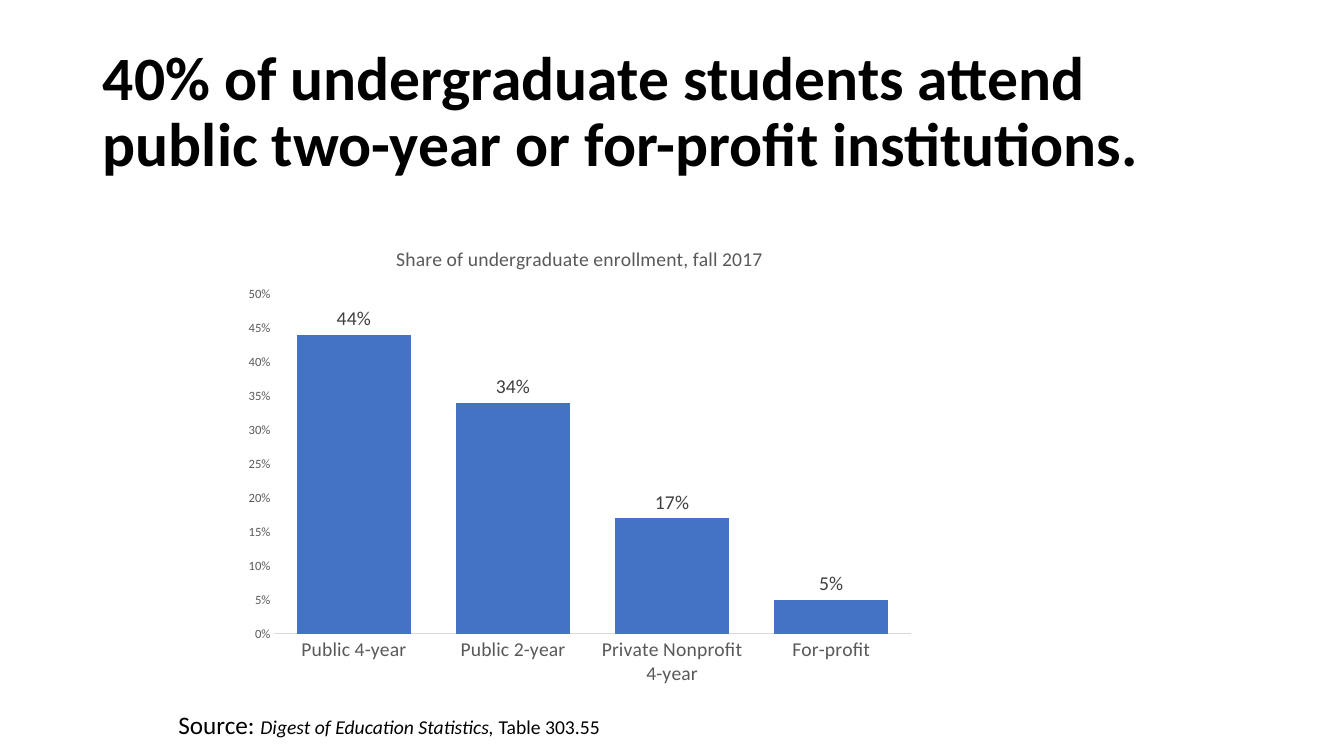
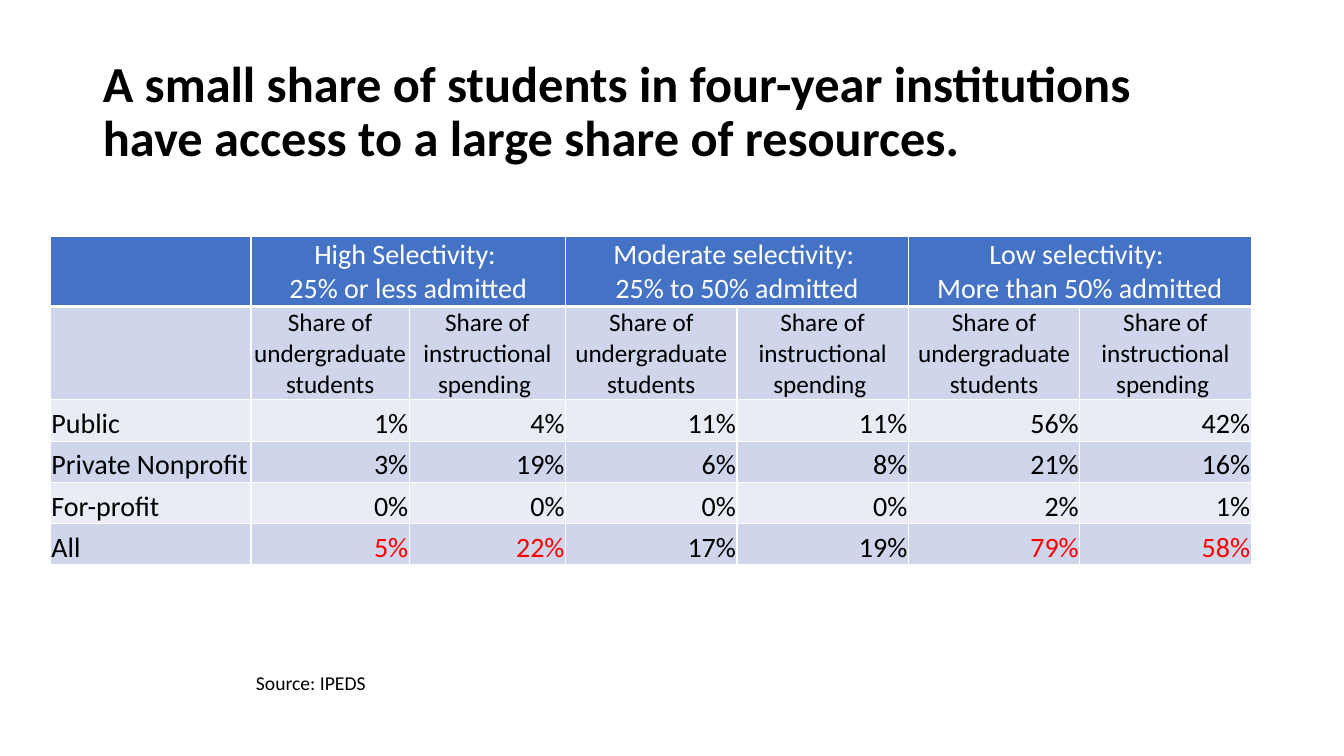
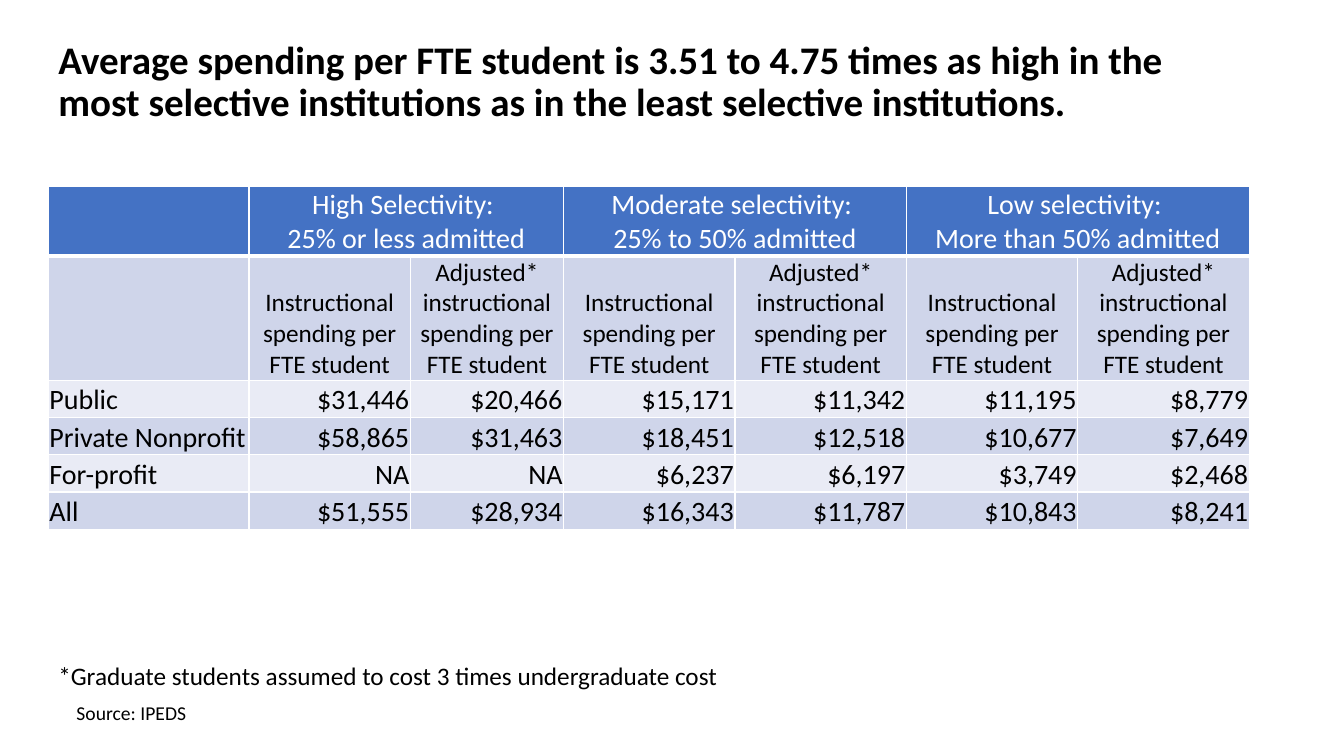
import dataclasses
import typing

import lxml.etree
import pptx
import pptx.chart.data
import pptx.dml.color
import pptx.enum.chart
import pptx.enum.text
import pptx.oxml.ns
import pptx.util

Inches = pptx.util.Inches
Pt = pptx.util.Pt
Align = pptx.enum.text.PP_ALIGN
Anchor = pptx.enum.text.MSO_ANCHOR

FONT = "Calibri"
BLACK, WHITE, RED, BLUE = "000000", "FFFFFF", "FF0000", "4472C4"
DARK_BAND, LIGHT_BAND = "CFD5EA", "E9EBF5"
AXIS_TEXT, LABEL_TEXT, AXIS_LINE = "595959", "404040", "D9D9D9"

SELECTIVITY_GROUPS = (
    "High Selectivity: \n25% or less admitted",
    "Moderate selectivity: \n25% to 50% admitted",
    "Low selectivity: \nMore than 50% admitted",
)
SECTORS = ("Public", "Private Nonprofit", "For-profit", "All")


@dataclasses.dataclass(frozen=True)
class Box:
    left: float
    top: float
    width: float
    height: float

    def lengths(self) -> tuple[int, ...]:
        return tuple(Inches(side) for side in dataclasses.astuple(self))


@dataclasses.dataclass(frozen=True)
class Heading:
    text: str
    size: float
    box: Box = Box(0.92, 0.4, 11.5, 1.45)
    anchor: Anchor = Anchor.MIDDLE
    margin_top: float = 0.05


@dataclasses.dataclass(frozen=True)
class Phrase:
    text: str
    size: float = 14
    italic: bool = False


@dataclasses.dataclass(frozen=True)
class Note:
    box: Box
    phrases: tuple[Phrase, ...]
    wrap: bool = False
    anchor: Anchor = Anchor.TOP


@dataclasses.dataclass(frozen=True)
class SelectivityTable:
    box: Box
    column_widths: tuple[float, ...]
    row_heights: tuple[float, ...]
    measures: tuple[str, str]
    values: tuple[str, ...]
    red_columns: tuple[int, ...] = ()


def color(value: str) -> pptx.dml.color.RGBColor:
    return pptx.dml.color.RGBColor.from_string(value)


def set_font(font: typing.Any, size: float, ink: str = BLACK, bold: bool = False) -> None:
    font.name = FONT
    font.size = Pt(size)
    font.bold = bold
    font.color.rgb = color(ink)


def add_titled_slide(deck: typing.Any, heading: Heading) -> typing.Any:
    slide = deck.slides.add_slide(deck.slide_layouts[5])
    title = slide.shapes.title
    title.left, title.top, title.width, title.height = heading.box.lengths()
    frame = title.text_frame
    frame.text = heading.text
    frame.word_wrap = True
    frame.auto_size = pptx.enum.text.MSO_AUTO_SIZE.NONE
    frame.vertical_anchor = heading.anchor
    frame.margin_top = Inches(heading.margin_top)
    paragraph = frame.paragraphs[0]
    paragraph.alignment = Align.LEFT
    paragraph.line_spacing = 0.9
    set_font(paragraph.font, heading.size, bold=True)
    return slide


def add_note(slide: typing.Any, note: Note) -> None:
    frame = slide.shapes.add_textbox(*note.box.lengths()).text_frame
    frame.word_wrap = note.wrap
    frame.vertical_anchor = note.anchor
    if not note.wrap:
        frame.auto_size = pptx.enum.text.MSO_AUTO_SIZE.SHAPE_TO_FIT_TEXT
    paragraph = frame.paragraphs[0]
    set_font(paragraph.font, note.phrases[0].size)
    for phrase in note.phrases:
        run = paragraph.add_run()
        run.text = phrase.text
        run.font.size = Pt(phrase.size)
        run.font.italic = phrase.italic


def add_enrollment_chart(slide: typing.Any, box: Box) -> None:
    enrollment = pptx.chart.data.CategoryChartData(number_format="0%")
    enrollment.categories = ("Public 4-year", "Public 2-year", "Private Nonprofit 4-year", "For-profit")
    caption = "Share of undergraduate enrollment, fall 2017"
    enrollment.add_series(caption, (0.44, 0.34, 0.17, 0.05))
    chart = slide.shapes.add_chart(
        pptx.enum.chart.XL_CHART_TYPE.COLUMN_CLUSTERED, *box.lengths(), enrollment
    ).chart
    set_font(chart.font, 10)
    chart.has_legend = False
    chart.has_title = True
    chart.chart_title.include_in_layout = False
    chart.chart_title.text_frame.text = caption
    set_font(chart.chart_title.text_frame.paragraphs[0].font, 14, AXIS_TEXT)

    sector_axis, share_axis = chart.category_axis, chart.value_axis
    for axis, size in ((sector_axis, 14), (share_axis, 9)):
        axis.major_tick_mark = pptx.enum.chart.XL_TICK_MARK.NONE
        axis.minor_tick_mark = pptx.enum.chart.XL_TICK_MARK.NONE
        axis.has_major_gridlines = False
        set_font(axis.tick_labels.font, size, AXIS_TEXT)
    sector_axis.format.line.color.rgb = color(AXIS_LINE)
    sector_axis.format.line.width = Pt(0.75)
    share_axis.format.line.fill.background()
    share_axis.minimum_scale, share_axis.maximum_scale, share_axis.major_unit = 0, 0.5, 0.05
    share_axis.tick_labels.number_format = "0%"
    share_axis.tick_labels.number_format_is_linked = False

    columns = chart.plots[0]
    columns.gap_width = 40
    columns.overlap = -27
    columns.vary_by_categories = False
    shares = columns.series[0]
    shares.invert_if_negative = False
    shares.format.fill.solid()
    shares.format.fill.fore_color.rgb = color(BLUE)
    labels = shares.data_labels
    labels.show_value = True
    labels.position = pptx.enum.chart.XL_LABEL_POSITION.OUTSIDE_END
    labels.number_format = "0%"
    labels.number_format_is_linked = False
    set_font(labels.font, 14, LABEL_TEXT)


def set_borders(cell: typing.Any, top: float, bottom: float) -> None:
    properties = cell._tc.get_or_add_tcPr()
    qn = pptx.oxml.ns.qn
    for side, width in (("L", 1), ("R", 1), ("T", top), ("B", bottom)):
        line = lxml.etree.SubElement(properties, qn(f"a:ln{side}"), w=str(Pt(width)))
        fill = lxml.etree.SubElement(line, qn("a:solidFill"))
        lxml.etree.SubElement(fill, qn("a:srgbClr"), val=WHITE)


def fill_cell(cell: typing.Any, text: str, size: float, ink: str, alignment: Align) -> None:
    cell.vertical_anchor = Anchor.BOTTOM
    cell.margin_left = cell.margin_right = cell.margin_top = Inches(0.01)
    cell.margin_bottom = 0
    cell.text_frame.text = text
    for paragraph in cell.text_frame.paragraphs:
        paragraph.alignment = alignment
        set_font(paragraph.font, size, ink)


def add_selectivity_table(slide: typing.Any, content: SelectivityTable) -> None:
    row_count, column_count = len(content.row_heights), len(content.column_widths)
    table = slide.shapes.add_table(row_count, column_count, *content.box.lengths()).table
    table.first_row = table.horz_banding = False
    for column, width in zip(table.columns, content.column_widths):
        column.width = Inches(width)
    for row, height in zip(table.rows, content.row_heights):
        row.height = Inches(height)

    for r in range(row_count):
        band = BLUE if r == 0 else (DARK_BAND if r % 2 else LIGHT_BAND)
        for c in range(column_count):
            cell = table.cell(r, c)
            set_borders(cell, top=3 if r == 1 else 1, bottom=3 if r == 0 else 1)
            cell.fill.solid()
            cell.fill.fore_color.rgb = color(band)

    for g, group in enumerate(SELECTIVITY_GROUPS):
        first = 1 + 2 * g
        table.cell(0, first).merge(table.cell(0, first + 1))
        fill_cell(table.cell(0, first), group, 20, WHITE, Align.CENTER)
        for offset, measure in enumerate(content.measures):
            fill_cell(table.cell(1, first + offset), measure, 18, BLACK, Align.CENTER)

    for r, (sector, values) in enumerate(zip(SECTORS, content.values), start=2):
        fill_cell(table.cell(r, 0), sector, 20, BLACK, Align.LEFT)
        for c, value in enumerate(values.split(), start=1):
            ink = RED if sector == "All" and c in content.red_columns else BLACK
            fill_cell(table.cell(r, c), value, 20, ink, Align.RIGHT)


RESOURCE_SHARES = SelectivityTable(
    box=Box(0.5, 2.35, 11.92, 3.21),
    column_widths=(1.99, 1.57, 1.55) + (1.7,) * 4,
    row_heights=(0.67, 0.92) + (0.41,) * 4,
    measures=("Share of undergraduate students", "Share of instructional spending "),
    values=(
        "1% 4% 11% 11% 56% 42%",
        "3% 19% 6% 8% 21% 16%",
        "0% 0% 0% 0% 2% 1%",
        "5% 22% 17% 19% 79% 58%",
    ),
    red_columns=(1, 2, 5, 6),
)

SPENDING_PER_STUDENT = SelectivityTable(
    box=Box(0.48, 1.85, 11.93, 3.35),
    column_widths=(1.99, 1.6, 1.52) + (1.7,) * 4,
    row_heights=(0.68, 1.23) + (0.37,) * 4,
    measures=(
        "Instructional spending per FTE student",
        "Adjusted* instructional spending per FTE student",
    ),
    values=(
        "$31,446 $20,466 $15,171 $11,342 $11,195 $8,779",
        "$58,865 $31,463 $18,451 $12,518 $10,677 $7,649",
        "NA NA $6,237 $6,197 $3,749 $2,468",
        "$51,555 $28,934 $16,343 $11,787 $10,843 $8,241",
    ),
)


def main() -> None:
    deck = pptx.Presentation()
    deck.slide_width, deck.slide_height = Inches(13.33), Inches(7.5)
    ipeds_source = (Phrase("Source: IPEDS"),)

    enrollment = add_titled_slide(deck, Heading(
        "40% of undergraduate students attend public two-year or for-profit institutions.", 44))
    add_enrollment_chart(enrollment, Box(2.33, 2.25, 6.84, 4.65))
    add_note(enrollment, Note(Box(1.67, 6.99, 4.43, 0.4), (
        Phrase("Source: ", 18),
        Phrase("Digest of Education Statistics, ", italic=True),
        Phrase("Table 303.55"),
    )))

    resources = add_titled_slide(deck, Heading(
        "A small share of students in four-year institutions have access to a large share of resources.", 36))
    add_selectivity_table(resources, RESOURCE_SHARES)
    add_note(resources, Note(Box(2.44, 6.61, 1.3, 0.34), ipeds_source))

    spending = add_titled_slide(deck, Heading(
        "Average spending per FTE student is 3.51 to 4.75 times as high in the most selective "
        "institutions as in the least selective institutions.",
        27.9, Box(0.48, 0.4, 11.93, 1.45), Anchor.TOP, 0))
    add_selectivity_table(spending, SPENDING_PER_STUDENT)
    add_note(spending, Note(Box(0.66, 6.9, 1.61, 0.34), ipeds_source, wrap=True))
    add_note(spending, Note(
        Box(0.48, 5.89, 12.85, 1.01),
        (Phrase("*Graduate students assumed to cost 3 times undergraduate cost", 18),),
        wrap=True, anchor=Anchor.BOTTOM))

    deck.save("out.pptx")


if __name__ == "__main__":
    main()
